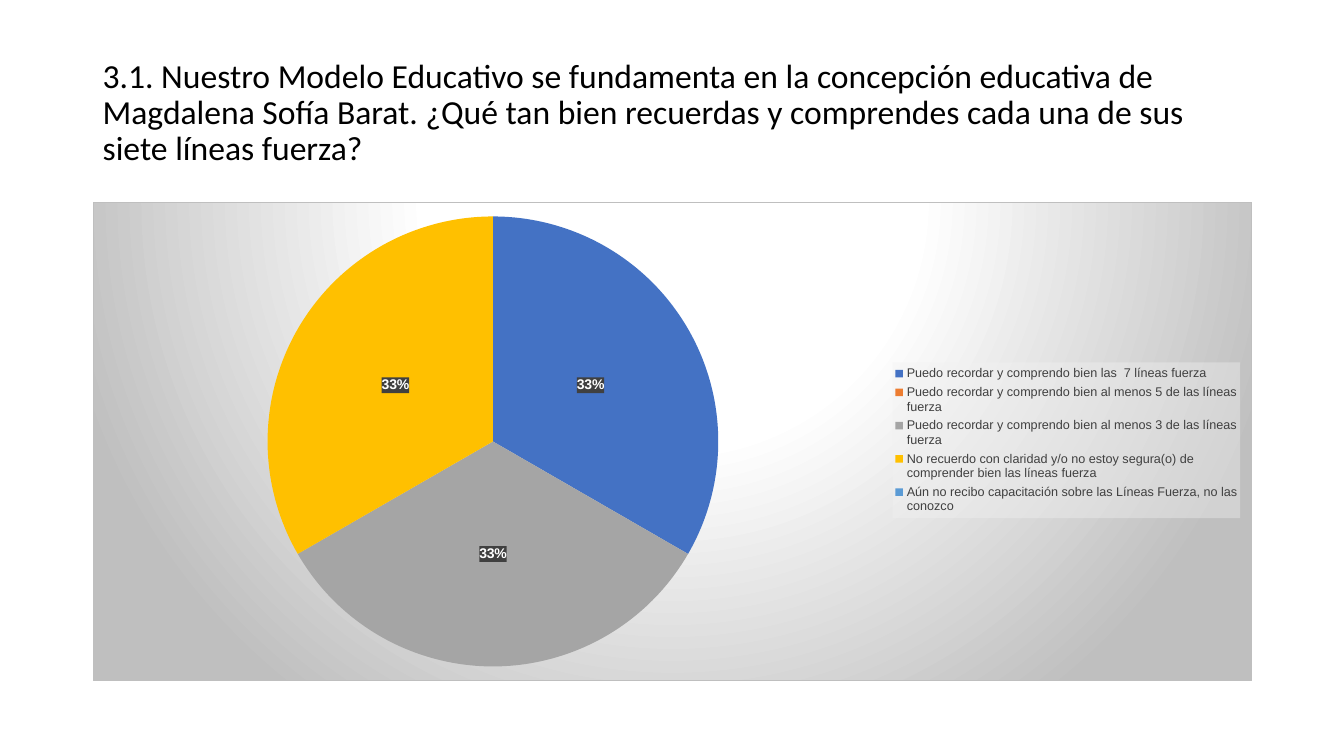
from lxml import etree
from pptx import Presentation
from pptx.chart.data import CategoryChartData
from pptx.dml.color import RGBColor
from pptx.enum.chart import XL_CHART_TYPE, XL_LABEL_POSITION, XL_LEGEND_POSITION
from pptx.enum.text import MSO_ANCHOR
from pptx.oxml.ns import qn
from pptx.util import Inches, Pt

PIE = XL_CHART_TYPE.PIE
CENTER = XL_LABEL_POSITION.CENTER
RIGHT = XL_LEGEND_POSITION.RIGHT
MIDDLE = MSO_ANCHOR.MIDDLE

COLORS = {
    "text": "000000", "white": "FFFFFF", "dark": "404040",
    "edge": "BFBFBF", "legend": "F2F2F2",
}
SLICES = ["4472C4", "ED7D31", "A5A5A5", "FFC000", "5B9BD5"]
TITLE = ("3.1. Nuestro Modelo Educativo se fundamenta en la concepción educativa de "
         "Magdalena Sofía Barat. ¿Qué tan bien recuerdas y comprendes cada una de sus "
         "siete líneas fuerza?")
ANSWERS = [
    ("Puedo recordar y comprendo bien las  7 líneas fuerza", 33),
    ("Puedo recordar y comprendo bien al menos 5 de las líneas fuerza", 0),
    ("Puedo recordar y comprendo bien al menos 3 de las líneas fuerza", 33),
    ("No recuerdo con claridad y/o no estoy segura(o) de comprender bien las líneas fuerza", 33),
    ("Aún no recibo capacitación sobre las Líneas Fuerza, no las conozco", 0),
]
NS = ('xmlns:c="http://schemas.openxmlformats.org/drawingml/2006/chart" '
      'xmlns:a="http://schemas.openxmlformats.org/drawingml/2006/main"')


def chart_xml(tag, body):
    return etree.fromstring(f"<c:{tag} {NS}>{body}</c:{tag}>")


def solid(color, alpha=100):
    return (f'<a:solidFill><a:srgbClr val="{color}"><a:alpha val="{alpha * 1000}"/>'
            '</a:srgbClr></a:solidFill>')


def set_layout(parent, index, x, y, w, h, inner=False):
    for old in parent.findall(qn("c:layout")):
        parent.remove(old)
    target = '<c:layoutTarget val="inner"/>' if inner else ""
    sizes = "".join(f'<c:{k} val="{v}"/>' for k, v in zip("xywh", (x, y, w, h)))
    modes = '<c:xMode val="edge"/><c:yMode val="edge"/>'
    parent.insert(index, chart_xml(
        "layout", f"<c:manualLayout>{target}{modes}{sizes}</c:manualLayout>"))


def set_font(font, size, color, name="Arial", bold=False):
    font.size, font.name, font.bold = Pt(size), name, bold
    font.color.rgb = RGBColor.from_string(color)


def add_text(slide, box, text, size=24, color=COLORS["text"], name="Calibri", spacing=0.9):
    tf = slide.shapes.add_textbox(*box).text_frame
    tf.word_wrap = True
    tf.vertical_anchor = MIDDLE
    p = tf.paragraphs[0]
    p.line_spacing = spacing
    r = p.add_run()
    r.text = text
    set_font(r.font, size, color, name)


def add_pie(slide, box):
    data = CategoryChartData()
    data.categories = [answer for answer, _ in ANSWERS]
    values = [value for _, value in ANSWERS]
    data.add_series("Series 1", values)
    chart = slide.shapes.add_chart(PIE, *box, data).chart
    chart.has_title = False
    set_font(chart.font, 10, COLORS["text"])

    # Slices
    plot = chart.plots[0]
    plot.vary_by_categories = True
    series = plot.series[0]
    for i, color in enumerate(SLICES):
        fill = series.points[i].format.fill
        fill.solid()
        fill.fore_color.rgb = RGBColor.from_string(color)

    # Percent labels, none on empty slices
    labels = series.data_labels
    labels.show_percentage, labels.show_value = True, False
    labels.number_format, labels.number_format_is_linked = "0%", False
    labels.position = CENTER
    set_font(labels.font, 10, COLORS["white"], bold=True)
    d = series._element.find(qn("c:dLbls"))
    d.find(qn("c:txPr")).addprevious(chart_xml("spPr", solid(COLORS["dark"], 90)))
    empty = [i for i, value in enumerate(values) if value == 0]
    for n, i in enumerate(empty):
        d.insert(n, chart_xml("dLbl", f'<c:idx val="{i}"/><c:delete val="1"/>'))

    # Legend
    chart.has_legend = True
    legend = chart.legend
    legend.position = RIGHT
    legend.include_in_layout = False
    set_font(legend.font, 9, COLORS["dark"])
    el = legend._element
    set_layout(el, 1, 0.69, 0.335, 0.3, 0.325)
    el.find(qn("c:txPr")).addprevious(chart_xml("spPr", solid(COLORS["legend"], 39)))

    # Plot position and radial background
    root = chart._chartSpace
    body = root.find(qn("c:chart"))
    set_layout(body.find(qn("c:plotArea")), 0, 0.15, 0.03, 0.39, 0.94, inner=True)
    stops = "".join(
        f'<a:gs pos="{pos * 1000}"><a:srgbClr val="{COLORS[key]}"/></a:gs>'
        for pos, key in ((0, "white"), (39, "white"), (100, "edge")))
    body.addnext(chart_xml("spPr", (
        f'<a:gradFill><a:gsLst>{stops}</a:gsLst><a:path path="circle">'
        '<a:fillToRect l="50000" t="-80000" r="50000" b="180000"/></a:path></a:gradFill>'
        f'<a:ln w="9525">{solid(COLORS["edge"])}</a:ln>')))


def main():
    prs = Presentation()
    prs.slide_width, prs.slide_height = Inches(13.33), Inches(7.5)
    slide = prs.slides.add_slide(prs.slide_layouts[6])
    left, width = Inches(0.92), Inches(11.5)
    add_text(slide, (left, Inches(0.4), width, Inches(1.45)), TITLE)
    add_pie(slide, (left, Inches(2), width, Inches(4.76)))
    prs.save("out.pptx")


if __name__ == "__main__":
    main()
